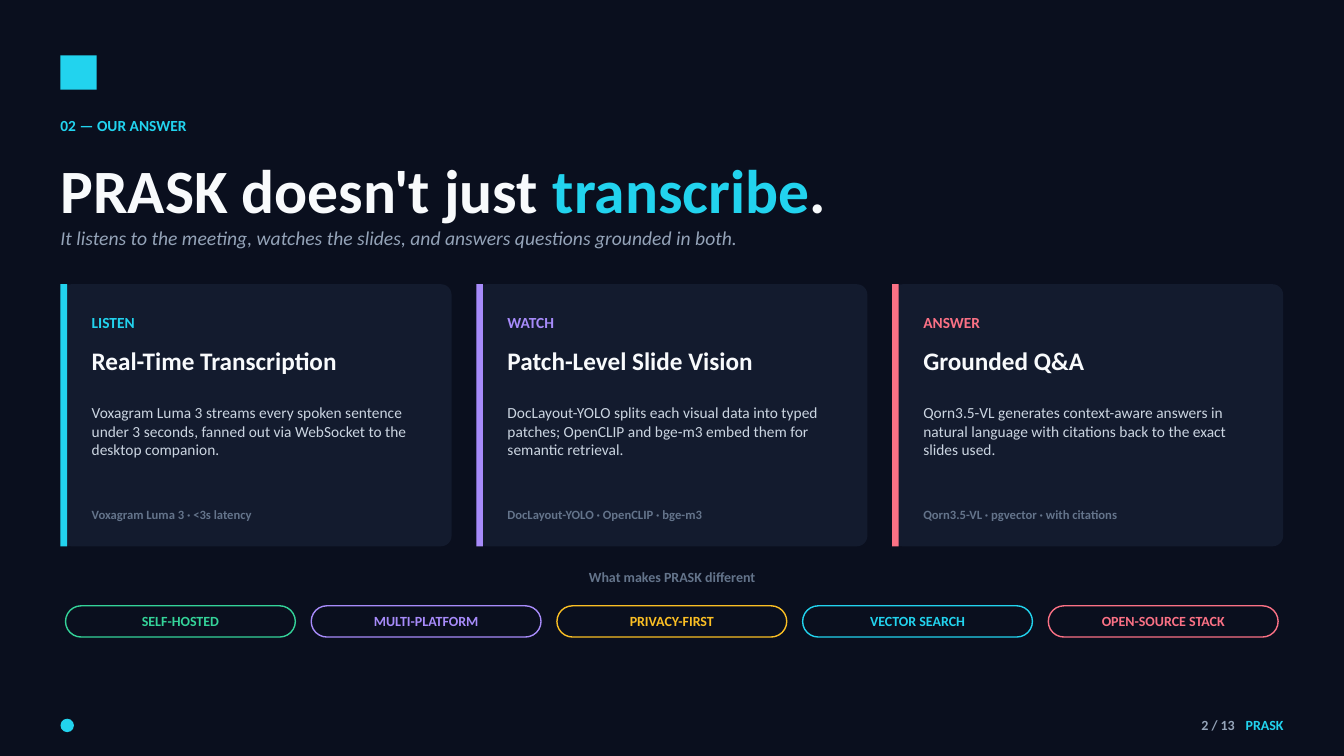
from dataclasses import dataclass

from pptx import Presentation
from pptx import util as u
from pptx.dml.color import RGBColor
from pptx.enum import shapes, text

NAVY = RGBColor(0x0A, 0x0F, 0x1E)
PANEL = RGBColor(0x13, 0x1B, 0x2E)
WHITE = RGBColor(0xF8, 0xFA, 0xFC)
SILVER = RGBColor(0xCB, 0xD5, 0xE1)
GREY = RGBColor(0x94, 0xA3, 0xB8)
SLATE = RGBColor(0x64, 0x74, 0x8B)
CYAN = RGBColor(0x22, 0xD3, 0xEE)
VIOLET = RGBColor(0xA7, 0x8B, 0xFA)
ROSE = RGBColor(0xFB, 0x71, 0x85)
GREEN = RGBColor(0x34, 0xD3, 0x99)
AMBER = RGBColor(0xFB, 0xBF, 0x24)

FONT = "Calibri"
COLUMNS, ROWS = 160, 90
CELL = u.Inches(7.5) / ROWS
MARGIN = 7.2
CONTENT_WIDTH = 145.6
Kind = shapes.MSO_SHAPE
Align = text.PP_ALIGN
Anchor = text.MSO_ANCHOR


@dataclass(frozen=True)
class Area:
    column: float
    row: float
    columns: float
    rows: float

    def lengths(self) -> list[u.Emu]:
        return [u.Emu(round(cells * CELL))
                for cells in (self.column, self.row, self.columns, self.rows)]


@dataclass(frozen=True)
class Run:
    words: str
    size: float
    color: RGBColor
    bold: bool = True
    italic: bool = False


@dataclass(frozen=True)
class Card:
    label: str
    heading: str
    body: str
    tools: str
    color: RGBColor


@dataclass(frozen=True)
class Pill:
    label: str
    color: RGBColor


CARDS = [
    Card("LISTEN", "Real-Time Transcription",
         "Voxagram Luma 3 streams every spoken sentence under 3 seconds, "
         "fanned out via WebSocket to the desktop companion.",
         "Voxagram Luma 3 · <3s latency", CYAN),
    Card("WATCH", "Patch-Level Slide Vision",
         "DocLayout-YOLO splits each visual data into typed patches; "
         "OpenCLIP and bge-m3 embed them for semantic retrieval.",
         "DocLayout-YOLO · OpenCLIP · bge-m3", VIOLET),
    Card("ANSWER", "Grounded Q&A",
         "Qorn3.5-VL generates context-aware answers in natural language "
         "with citations back to the exact slides used.",
         "Qorn3.5-VL · pgvector · with citations", ROSE),
]
PILLS = [
    Pill("SELF-HOSTED", GREEN),
    Pill("MULTI-PLATFORM", VIOLET),
    Pill("PRIVACY-FIRST", AMBER),
    Pill("VECTOR SEARCH", CYAN),
    Pill("OPEN-SOURCE STACK", ROSE),
]


def write(shape, runs: list[Run], align=Align.LEFT, anchor=Anchor.TOP) -> None:
    frame = shape.text_frame
    frame.word_wrap = True
    frame.margin_left = frame.margin_right = 0
    frame.margin_top = frame.margin_bottom = 0
    frame.vertical_anchor = anchor
    paragraph = frame.paragraphs[0]
    paragraph.alignment = align
    for part in runs:
        run = paragraph.add_run()
        run.text = part.words
        run.font.name = FONT
        run.font.size = u.Pt(part.size)
        run.font.bold = part.bold
        run.font.italic = part.italic
        run.font.color.rgb = part.color


def add_text(slide, area: Area, runs: list[Run], align=Align.LEFT, anchor=Anchor.TOP) -> None:
    write(slide.shapes.add_textbox(*area.lengths()), runs, align, anchor)


def add_block(slide, kind, area: Area, fill: RGBColor,
              line: RGBColor | None = None, rounding: float | None = None):
    shape = slide.shapes.add_shape(kind, *area.lengths())
    shape.shadow.inherit = False
    shape.fill.solid()
    shape.fill.fore_color.rgb = fill
    if line is None:
        shape.line.fill.background()
    else:
        shape.line.color.rgb = line
        shape.line.width = u.Pt(1)
    if rounding is not None:
        shape.adjustments[0] = rounding
    return shape


def add_card(slide, card: Card, index: int) -> None:
    left, top, height = MARGIN + index * 49.5, 33.84, 31.2
    add_block(slide, Kind.ROUNDED_RECTANGLE, Area(left, top, 46.56, height), PANEL, rounding=0.04)
    add_block(slide, Kind.RECTANGLE, Area(left, top, 0.8, height), card.color)
    lines = [
        (3.48, 3.36, Run(card.label, 11, card.color)),
        (7.32, 5.28, Run(card.heading, 18, WHITE)),
        (14.16, 6.72, Run(card.body, 11, SILVER, bold=False)),
        (26.52, 3.12, Run(card.tools, 9, SLATE)),
    ]
    for offset, rows, run in lines:
        add_text(slide, Area(left + 3.72, top + offset, 39.24, rows), [run])


def add_pill(slide, pill: Pill, index: int) -> None:
    area = Area(7.8 + index * 29.25, 72.12, 27.36, 3.72)
    shape = add_block(slide, Kind.ROUNDED_RECTANGLE, area, NAVY, pill.color, 0.5)
    write(shape, [Run(pill.label, 10, pill.color)], Align.CENTER, Anchor.MIDDLE)


def add_header(slide) -> None:
    add_block(slide, Kind.RECTANGLE, Area(MARGIN, 6.6, 4.32, 4.08), CYAN)
    add_text(slide, Area(MARGIN, 13.8, 96, 3.6), [Run("02 — OUR ANSWER", 11, CYAN)])
    add_text(slide, Area(MARGIN, 18.12, 144.36, 9.24), [
        Run("PRASK doesn't just ", 44, WHITE),
        Run("transcribe", 44, CYAN),
        Run(".", 44, WHITE),
    ])
    add_text(slide, Area(MARGIN, 26.88, 144.36, 3.72), [
        Run("It listens to the meeting, watches the slides, "
            "and answers questions grounded in both.", 14, GREY, bold=False, italic=True),
    ])


def add_footer(slide) -> None:
    add_block(slide, Kind.OVAL, Area(MARGIN, 85.56, 1.6, 1.6), CYAN)
    add_text(slide, Area(126.6, 84.48, 20.4, 3.72), [Run("2 / 13", 10, GREY)],
             Align.RIGHT, Anchor.MIDDLE)
    add_text(slide, Area(147.6, 84.48, 5.2, 3.72), [Run("PRASK", 10, CYAN)],
             Align.RIGHT, Anchor.MIDDLE)


def main() -> None:
    presentation = Presentation()
    presentation.slide_width = u.Emu(round(COLUMNS * CELL))
    presentation.slide_height = u.Emu(round(ROWS * CELL))
    slide = presentation.slides.add_slide(presentation.slide_layouts[6])
    slide.background.fill.solid()
    slide.background.fill.fore_color.rgb = NAVY
    add_header(slide)
    for index, card in enumerate(CARDS):
        add_card(slide, card, index)
    add_text(slide, Area(MARGIN, 67.68, CONTENT_WIDTH, 2.88),
             [Run("What makes PRASK different", 10, SLATE)], Align.CENTER)
    for index, pill in enumerate(PILLS):
        add_pill(slide, pill, index)
    add_footer(slide)
    presentation.save("out.pptx")


if __name__ == "__main__":
    main()
